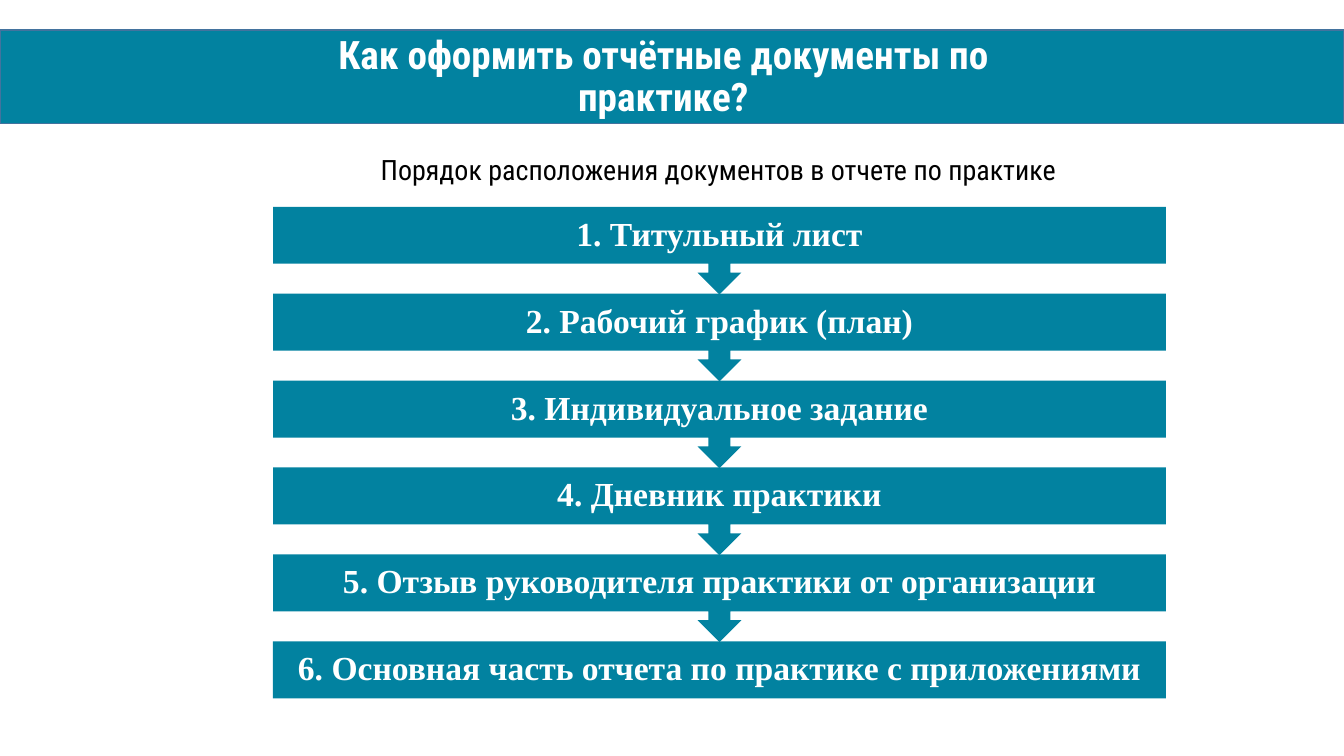
from dataclasses import dataclass

from pptx import Presentation
from pptx.dml.color import RGBColor
from pptx.enum.shapes import MSO_SHAPE as Preset
from pptx.enum.text import MSO_ANCHOR as Anchor, PP_ALIGN as Align
from pptx.shapes.autoshape import Shape
from pptx.slide import Slide
from pptx.util import Cm, Pt

TEAL = RGBColor(0x02, 0x82, 0xA0)
BANNER_EDGE = RGBColor(0x43, 0x73, 0x9E)
WHITE = RGBColor(0xFF, 0xFF, 0xFF)
BLACK = RGBColor(0x00, 0x00, 0x00)

SLIDE_WIDTH, SLIDE_HEIGHT = 33.87, 19.05
STEP_LEFT, FIRST_STEP_TOP, STEP_WIDTH = 6.88, 5.21, 22.5
STEP_PITCH, CALLOUT_HEIGHT, BAR_HEIGHT = 2.19, 2.21, 1.44

STEPS = [
    "Титульный лист",
    "Рабочий график (план)",
    "Индивидуальное задание",
    "Дневник практики",
    "Отзыв руководителя практики от организации",
    "Основная часть отчета по практике с приложениями",
]


@dataclass(frozen=True)
class Box:
    """A place on the slide, in centimetres."""
    left: float
    top: float
    width: float
    height: float

    def lengths(self) -> tuple[Cm, Cm, Cm, Cm]:
        return Cm(self.left), Cm(self.top), Cm(self.width), Cm(self.height)


@dataclass(frozen=True)
class TextStyle:
    font: str
    size: int
    color: RGBColor
    bold: bool = False
    inset: float | None = None


HEADING = TextStyle("Roboto Condensed", 28, WHITE, bold=True)
SUBHEADING = TextStyle("Roboto Condensed", 20, BLACK)
STEP = TextStyle("Times New Roman", 24, WHITE, bold=True, inset=0.48)


def add_block(slide: Slide, preset: Preset, box: Box) -> Shape:
    """Add a teal shape with neither outline nor shadow."""
    block = slide.shapes.add_shape(preset, *box.lengths())
    block.shadow.inherit = False
    block.fill.solid()
    block.fill.fore_color.rgb = TEAL
    block.line.fill.background()
    return block


def add_label(slide: Slide, box: Box, text: str, style: TextStyle) -> None:
    """Add one centred paragraph in a wrapping text box."""
    frame = slide.shapes.add_textbox(*box.lengths()).text_frame
    frame.word_wrap = True
    frame.vertical_anchor = Anchor.MIDDLE
    if style.inset is not None:
        for side in ("left", "top", "right", "bottom"):
            setattr(frame, f"margin_{side}", Cm(style.inset))
    paragraph = frame.paragraphs[0]
    paragraph.alignment = Align.CENTER
    paragraph.line_spacing = 0.9
    run = paragraph.add_run()
    run.text = text
    font_format = {"name": style.font, "size": Pt(style.size), "bold": style.bold}
    for attribute, value in font_format.items():
        setattr(run.font, attribute, value)
    run.font.color.rgb = style.color


def add_step(slide: Slide, index: int, text: str) -> None:
    """Add a numbered bar; every bar but the last points to the next one."""
    top = FIRST_STEP_TOP + index * STEP_PITCH
    bar = Box(STEP_LEFT, top, STEP_WIDTH, BAR_HEIGHT)
    if index == len(STEPS) - 1:
        add_block(slide, Preset.RECTANGLE, bar)
    else:
        callout_box = Box(STEP_LEFT, top, STEP_WIDTH, CALLOUT_HEIGHT)
        callout = add_block(slide, Preset.UP_ARROW_CALLOUT, callout_box)
        callout.rotation = 180
    add_label(slide, bar, f"{index + 1}. {text}", STEP)


def main() -> None:
    deck = Presentation()
    deck.slide_width, deck.slide_height = Cm(SLIDE_WIDTH), Cm(SLIDE_HEIGHT)
    slide = deck.slides.add_slide(deck.slide_layouts[6])

    add_label(slide, Box(2.21, 3.45, 31.8, 1.73),
              "Порядок расположения документов в отчете по практике", SUBHEADING)

    banner = add_block(slide, Preset.RECTANGLE, Box(0, 0.76, SLIDE_WIDTH, 2.36))
    banner.line.color.rgb = BANNER_EDGE
    banner.line.width = Pt(1)

    # The last step goes to the back, so each arrow tip lies over the next bar.
    for index, text in reversed(list(enumerate(STEPS))):
        add_step(slide, index, text)

    add_label(slide, Box(6.25, 1.09, 20.93, 1.75),
              "Как оформить отчётные документы по практике?", HEADING)
    deck.save("out.pptx")


if __name__ == "__main__":
    main()
